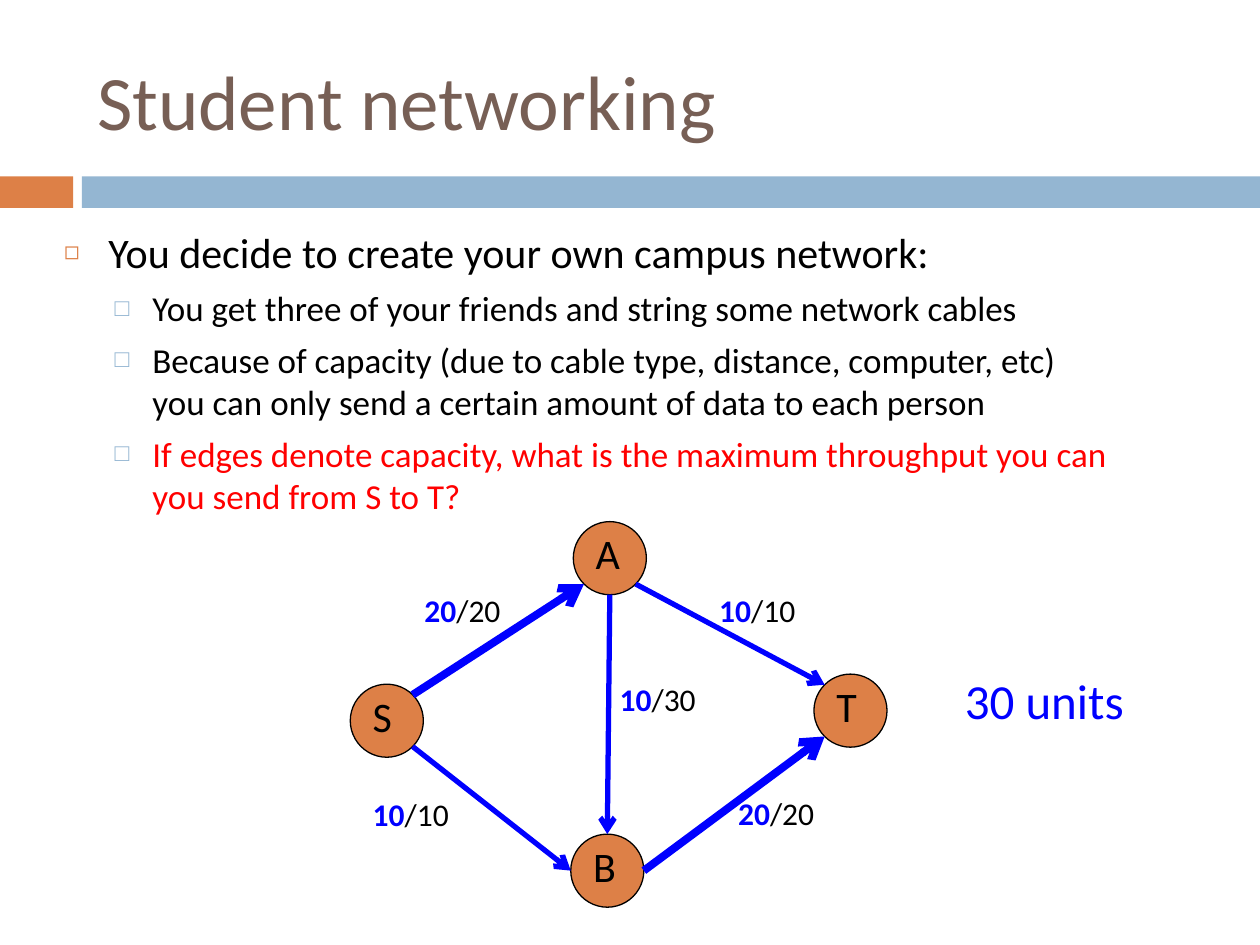
"""Build the slide on maximum throughput in a student network."""
import math

import lxml.etree
import pptx
import pptx.dml.color
import pptx.enum.shapes
import pptx.enum.text
import pptx.oxml.ns
import pptx.util

Inches = pptx.util.Inches
Pt = pptx.util.Pt
RGBColor = pptx.dml.color.RGBColor
qn = pptx.oxml.ns.qn
MSO_SHAPE = pptx.enum.shapes.MSO_SHAPE

ORANGE = RGBColor(0xDD, 0x80, 0x47)
SKY = RGBColor(0x94, 0xB6, 0xD2)
BROWN = RGBColor(0x77, 0x5F, 0x55)
BLUE = RGBColor(0x00, 0x00, 0xFF)
RED = RGBColor(0xFF, 0x00, 0x00)
BLACK = RGBColor(0x00, 0x00, 0x00)

FONT = "Calibri"
RADIUS = 0.29
NODES = {"S": (3.07, 5.72), "A": (4.84, 4.43), "B": (4.82, 6.91), "T": (6.75, 5.64)}
EDGES = [
    ("S", -45, "A", 135, 4.5),
    ("S", 45, "B", 180, 3),
    ("B", 0, "T", 135, 4.5),
    ("A", 90, "B", -90, 3),
    ("A", 45, "T", -135, 3),
]
FLOWS = [
    ("20", "/20", 3.27, 4.64, 1.09),
    ("20", "/20", 5.76, 6.25, 1.29),
    ("10", "/10", 2.86, 6.26, 1.25),
    ("10", "/10", 5.61, 4.64, 1.11),
    ("10", "/30", 4.82, 5.35, 0.94),
]
BULLETS = [
    (0, "You decide to create your own campus network:", BLACK),
    (1, "You get three of your friends and string some network cables", BLACK),
    (1, "Because of capacity (due to cable type, distance, computer, etc) "
        "you can only send a certain amount of data to each person", BLACK),
    (1, "If edges denote capacity, what is the maximum throughput you can "
        "you send from S to T?", RED),
]
LEVELS = [
    {"size": 24, "before": 7, "left": 0.35, "hang": 0.35, "mark": "◻", "color": ORANGE, "scale": 60},
    {"size": 20, "before": 5.5, "left": 0.7, "hang": 0.3, "mark": "□", "color": SKY, "scale": 70},
]


def place(shape, left, top, width, height):
    """Move and size a shape, in inches."""
    shape.left, shape.top = Inches(left), Inches(top)
    shape.width, shape.height = Inches(width), Inches(height)


def style(font, size, color, bold=False):
    """Set the face, size, colour and weight of a font."""
    font.name, font.size, font.bold = FONT, Pt(size), bold
    font.color.rgb = color


def add_filled(shapes, kind, left, top, width, height, color):
    """Add a flat shape without an outline."""
    shape = shapes.add_shape(kind, Inches(left), Inches(top), Inches(width), Inches(height))
    shape.shadow.inherit = False
    shape.fill.solid()
    shape.fill.fore_color.rgb = color
    shape.line.fill.background()
    return shape


def add_label(shapes, left, top, width, height, size, *spans):
    """Add a text box whose spans are (text, colour, bold)."""
    box = shapes.add_textbox(Inches(left), Inches(top), Inches(width), Inches(height))
    box.text_frame.word_wrap = True
    para = box.text_frame.paragraphs[0]
    for text, color, bold in spans:
        span = para.add_run()
        span.text = text
        style(span.font, size, color, bold)


def add_node(page, name):
    """Add a named circle of the network as a group."""
    x, y = NODES[name]
    group = page.shapes.add_group_shape()
    left, top = x - RADIUS, y - RADIUS
    circle = add_filled(group.shapes, MSO_SHAPE.OVAL, left, top, 2 * RADIUS, 2 * RADIUS, ORANGE)
    circle.line.color.rgb = BLACK
    circle.line.width = Pt(0.75)
    add_label(group.shapes, left + 0.08, top, 0.5, 0.5, 24, (name, BLACK, False))


def rim(name, degrees):
    """Return the point on a node's circle at a clockwise angle."""
    x, y = NODES[name]
    angle = math.radians(degrees)
    return Inches(x + RADIUS * math.cos(angle)), Inches(y + RADIUS * math.sin(angle))


def add_edge(page, start, start_angle, end, end_angle, width):
    """Add an arrow between the rims of two nodes."""
    edge = page.shapes.add_connector(
        pptx.enum.shapes.MSO_CONNECTOR.STRAIGHT, *rim(start, start_angle), *rim(end, end_angle))
    edge.line.color.rgb = BLUE
    edge.line.width = Pt(width)
    lxml.etree.SubElement(edge.line._get_or_add_ln(), qn("a:tailEnd"), type="arrow")
    lxml.etree.SubElement(edge._element.spPr, qn("a:effectLst"))


def add_bullet(para, left, hang, mark, color, scale):
    """Give a paragraph a coloured, scaled bullet and a hanging indent."""
    props = para._p.get_or_add_pPr()
    props.set("marL", str(Inches(left)))
    props.set("indent", str(-Inches(hang)))
    tint = lxml.etree.SubElement(props, qn("a:buClr"))
    lxml.etree.SubElement(tint, qn("a:srgbClr"), val=str(color))
    lxml.etree.SubElement(props, qn("a:buSzPct"), val=str(scale * 1000))
    lxml.etree.SubElement(props, qn("a:buChar"), char=mark)


def fill_title(title):
    """Write the title."""
    place(title, 0.67, 0.25, 8.92, 1.08)
    title.text_frame.text = "Student networking"
    title.text_frame.vertical_anchor = pptx.enum.text.MSO_ANCHOR.MIDDLE
    para = title.text_frame.paragraphs[0]
    para.alignment = pptx.enum.text.PP_ALIGN.LEFT
    style(para.font, 44, BROWN)


def fill_body(body):
    """Write the bulleted list."""
    place(body, 0.41, 1.75, 8.53, 2.57)
    frame = body.text_frame
    frame.auto_size = pptx.enum.text.MSO_AUTO_SIZE.NONE
    frame.text = "\n".join(text for _, text, _ in BULLETS)
    for para, (level, _, color) in zip(frame.paragraphs, BULLETS):
        look = LEVELS[level]
        para.level = level
        para.space_before = Pt(look["before"])
        add_bullet(para, look["left"], look["hang"], look["mark"], look["color"], look["scale"])
        style(para.font, look["size"], color)


def main():
    """Build and save the deck."""
    deck = pptx.Presentation()
    deck.slide_width, deck.slide_height = Inches(10), Inches(7.5)
    page = deck.slides.add_slide(deck.slide_layouts[1])
    fill_title(page.shapes.title)
    fill_body(page.placeholders[1])
    add_filled(page.shapes, MSO_SHAPE.RECTANGLE, 0, 1.4, 0.58, 0.25, ORANGE)
    add_filled(page.shapes, MSO_SHAPE.RECTANGLE, 0.65, 1.4, 9.35, 0.25, SKY)
    for name in NODES:
        add_node(page, name)
    for edge in EDGES:
        add_edge(page, *edge)
    for flow, capacity, left, top, width in FLOWS:
        add_label(page.shapes, left, top, width, 0.4, 18, (flow, BLUE, True), (capacity, BLACK, False))
    add_label(page.shapes, 7.56, 5.27, 1.83, 0.57, 28, ("30 units", BLUE, False))
    deck.save("out.pptx")


if __name__ == "__main__":
    main()
